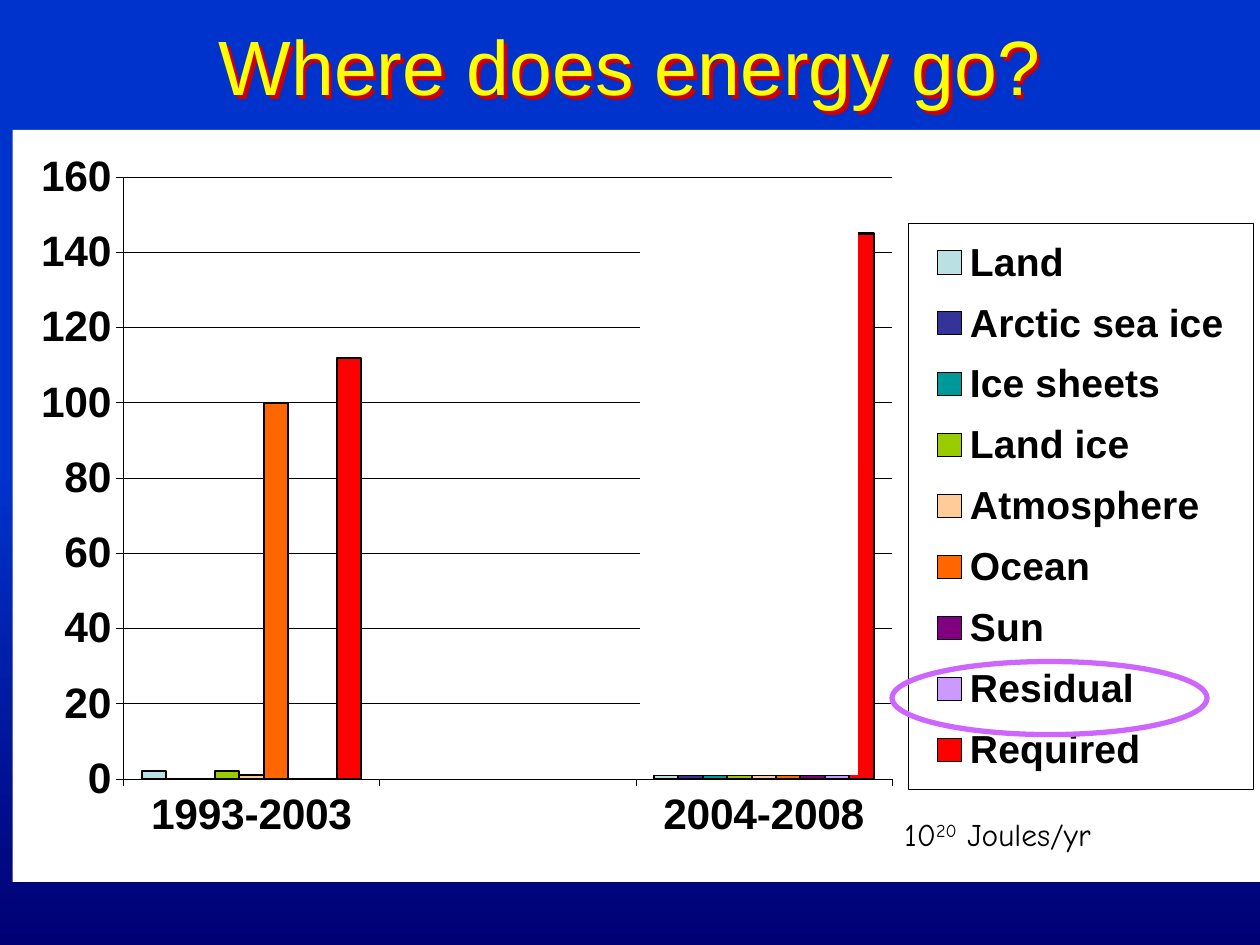
from lxml import etree
from pptx import Presentation
from pptx.chart.data import CategoryChartData
from pptx.dml.color import RGBColor
from pptx.enum.chart import XL_CHART_TYPE as ChartType, XL_LEGEND_POSITION as LegendPos
from pptx.enum.chart import XL_TICK_LABEL_POSITION as LabelPos, XL_TICK_MARK as TickMark
from pptx.enum.shapes import MSO_SHAPE as Shape
from pptx.enum.text import MSO_ANCHOR, MSO_AUTO_SIZE, PP_ALIGN
from pptx.oxml import parse_xml
from pptx.oxml.ns import nsdecls, qn
from pptx.util import Inches, Pt

BLUE = RGBColor(0x00, 0x33, 0xCC)
NAVY = RGBColor(0x00, 0x00, 0x74)
YELLOW = RGBColor(0xFF, 0xFF, 0x00)
BLACK = RGBColor(0x00, 0x00, 0x00)
WHITE = RGBColor(0xFF, 0xFF, 0xFF)
VIOLET = RGBColor(0xCC, 0x66, 0xFF)

# Name, 1993-2003, 2004-2008, colour
SERIES = [
    ("Land", 2, 1, RGBColor(0xBB, 0xE0, 0xE3)),
    ("Arctic sea ice", 0, 1, RGBColor(0x33, 0x33, 0x99)),
    ("Ice sheets", 0, 1, RGBColor(0x00, 0x99, 0x99)),
    ("Land ice", 2, 1, RGBColor(0x99, 0xCC, 0x00)),
    ("Atmosphere", 1, 1, RGBColor(0xFF, 0xCC, 0x99)),
    ("Ocean", 100, 1, RGBColor(0xFF, 0x66, 0x00)),
    ("Sun", 0, 1, RGBColor(0x80, 0x00, 0x80)),
    ("Residual", 0, 1, RGBColor(0xCC, 0x99, 0xFF)),
    ("Required", 112, 145, RGBColor(0xFF, 0x00, 0x00)),
]


def set_font(font, size, color, name="Arial", bold=False):
    font.name, font.size, font.bold = name, Pt(size), bold
    font.color.rgb = color


def make_layout(x, y, w, h, inner=False):
    layout = parse_xml(f"<c:layout {nsdecls('c')}><c:manualLayout/></c:layout>")
    values = [("layoutTarget", "inner")] if inner else []
    values += [("xMode", "edge"), ("yMode", "edge"), ("x", x), ("y", y), ("w", w), ("h", h)]
    for tag, value in values:
        etree.SubElement(layout[0], qn(f"c:{tag}")).set("val", str(value))
    return layout


deck = Presentation()
deck.slide_width, deck.slide_height = Inches(10), Inches(7.5)
page = deck.slides.add_slide(deck.slide_layouts[5])

# Background
back = page.background.fill
back.gradient()
back.gradient_angle = 270
for stop, (position, color) in zip(back.gradient_stops, [(0.5, BLUE), (1, NAVY)]):
    stop.position = position
    stop.color.rgb = color

# Title with a red shadow
title = page.shapes.title
title.left, title.top, title.width, title.height = Inches(0.5), Inches(0.08), Inches(9), Inches(0.87)
title.text_frame.vertical_anchor = MSO_ANCHOR.MIDDLE
para = title.text_frame.paragraphs[0]
para.alignment = PP_ALIGN.CENTER
span = para.add_run()
span.text = "Where does energy go?"
set_font(span.font, 44, YELLOW)
title.fill.background()
title._element.spPr.append(parse_xml(
    f'<a:effectLst {nsdecls("a")}><a:outerShdw dist="36000" dir="2700000" algn="ctr" rotWithShape="0">'
    '<a:srgbClr val="CC0000"/></a:outerShdw></a:effectLst>'))

# Column chart
data = CategoryChartData()
data.categories = ["1993-2003", "", "2004-2008"]
for name, first, last, color in SERIES:
    data.add_series(name, (first, None, last))
chart = page.shapes.add_chart(ChartType.COLUMN_CLUSTERED, Inches(0.1), Inches(1.03),
                              Inches(9.9), Inches(5.97), data).chart
chart.has_title = False
set_font(chart.font, 24.3, BLACK, bold=True)
plot = chart.plots[0]
plot.gap_width, plot.overlap, plot.vary_by_categories = 150, 0, False
for series, (name, first, last, color) in zip(plot.series, SERIES):
    series.format.fill.solid()
    series.format.fill.fore_color.rgb = color
    series.format.line.color.rgb = BLACK
    series.format.line.width = Pt(1.17)

# Axes
values = chart.value_axis
values.minimum_scale, values.maximum_scale, values.major_unit = 0, 160, 20
values.has_major_gridlines = True
chart.category_axis.tick_label_position = LabelPos.LOW
for axis in (chart.category_axis, values):
    axis.major_tick_mark = TickMark.OUTSIDE
    set_font(axis.tick_labels.font, 24.3, BLACK, bold=True)
for line in (chart.category_axis.format.line, values.format.line, values.major_gridlines.format.line):
    line.color.rgb = BLACK
    line.width = Pt(0.29)

# Legend, plot position and white chart area
chart.has_legend = True
legend = chart.legend
legend.position, legend.include_in_layout = LegendPos.RIGHT, False
set_font(legend.font, 22.3, BLACK, bold=True)
legend_xml = legend._element
for old in legend_xml.findall(qn("c:layout")):
    legend_xml.remove(old)
legend_xml.find(qn("c:legendPos")).addnext(make_layout(0.718, 0.124, 0.277, 0.753))
legend_xml.find(qn("c:txPr")).addprevious(parse_xml(
    f'<c:spPr {nsdecls("c", "a")}><a:solidFill><a:srgbClr val="FFFFFF"/></a:solidFill>'
    '<a:ln w="3683"><a:solidFill><a:srgbClr val="000000"/></a:solidFill></a:ln></c:spPr>'))
area = chart._chartSpace.chart.plotArea
for old in area.findall(qn("c:layout")):
    area.remove(old)
area.insert(0, make_layout(0.089, 0.063, 0.616, 0.8, inner=True))
chart._chartSpace.chart.addnext(parse_xml(
    f'<c:spPr {nsdecls("c", "a")}><a:solidFill><a:srgbClr val="FFFFFF"/></a:solidFill>'
    '<a:ln><a:noFill/></a:ln></c:spPr>'))

# Unit label
box = page.shapes.add_textbox(Inches(7.08), Inches(6.42), Inches(1.88), Inches(0.4))
box.text_frame.word_wrap = False
box.text_frame.auto_size = MSO_AUTO_SIZE.SHAPE_TO_FIT_TEXT
para = box.text_frame.paragraphs[0]
for text, raised in [("10", False), ("20", True), (" Joules/yr", False)]:
    span = para.add_run()
    span.text = text
    set_font(span.font, 18, BLACK, "Comic Neue")
    if raised:
        span._r.get_or_add_rPr().set("baseline", "30000")

# White panel that interrupts the gridlines and narrows the last column
panel = page.shapes.add_shape(Shape.RECTANGLE, Inches(5.08), Inches(1.75), Inches(1.73), Inches(4.4))
panel.shadow.inherit = False
panel.fill.solid()
panel.fill.fore_color.rgb = WHITE
panel.line.fill.background()

# Ring around the residual entry
ring = page.shapes.add_shape(Shape.OVAL, Inches(7.08), Inches(5.25), Inches(2.5), Inches(0.58))
ring.shadow.inherit = False
ring.fill.background()
ring.line.color.rgb = VIOLET
ring.line.width = Pt(3)

deck.save("out.pptx")
